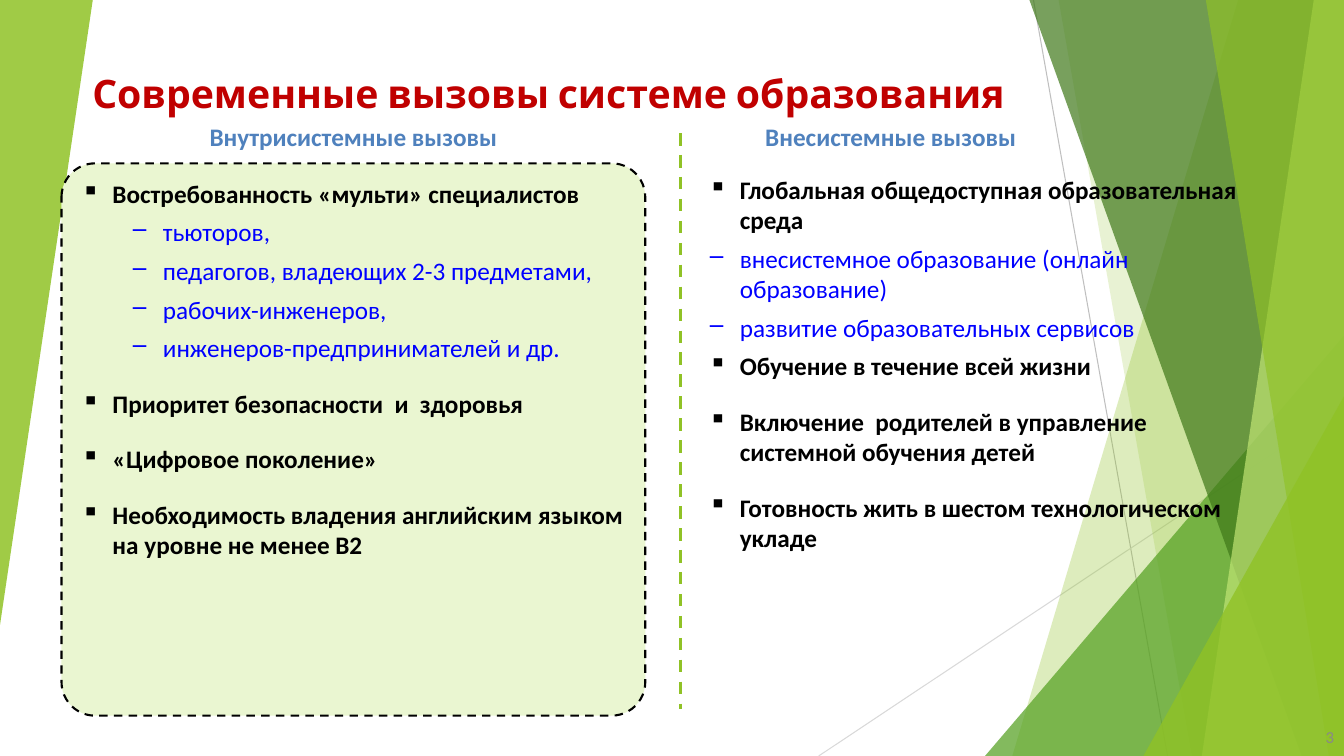
from lxml import etree
from pptx import Presentation, util as u
from pptx.dml.color import RGBColor
from pptx.enum import dml, shapes, text
from pptx.oxml.ns import qn

# Content
TITLE = "Современные вызовы системе образования"
HEADINGS = [("Внутрисистемные вызовы", 1.45, 4.11), ("Внесистемные вызовы", 7.27, 3.13)]
# Each item: kind, wording, space after in points
INTERNAL = [
    ("point", "Востребованность «мульти» специалистов", 6),
    ("detail", "тьюторов,", 6),
    ("detail", "педагогов, владеющих 2-3 предметами,", 6),
    ("detail", "рабочих-инженеров,", 6),
    ("detail", "инженеров-предпринимателей и др.", 18),
    ("point", "Приоритет безопасности  и  здоровья", 18),
    ("point", "«Цифровое поколение»", 18),
    ("point", "Необходимость владения английским языком на уровне не менее B2", 18),
]
EXTERNAL = [
    ("point", "Глобальная общедоступная образовательная среда", 6),
    ("detail", "внесистемное образование (онлайн образование)", 6),
    ("detail", "развитие образовательных сервисов", 6),
    ("point", "Обучение в течение всей жизни", 18),
    ("point", "Включение  родителей в управление системной обучения детей", 18),
    ("point", "Готовность жить в шестом технологическом укладе", 18),
]
STYLES = {
    "point": ("▪", {"color": "000000", "bold": True}),
    "detail": ("‒", {"color": "0000FF", "bold": False}),
}

# Background, back to front; every facet reaches the right and bottom edges
WIDTH, HEIGHT = 13.33, 7.5
HAIRLINES = [((10.25, 0), (11.58, HEIGHT), "BFBFBF"), ((WIDTH, 4.03), (8.12, HEIGHT), "D9D9D9")]
FACETS = [  # band: left edge at top and bottom; triangle: width and height
    ("band", 12.28, 10.04, "90C226", 30),
    ("band", 10.5, 11.82, "90C226", 20),
    ("triangle", 3.56, 4.17, "54A021", 72),
    ("band", 10.21, 12.91, "3F7819", 70),
    ("band", 13.03, 11.92, "C0E474", 70),
    ("band", 11.96, 13.18, "90C226", 65),
    ("triangle", 1.99, 3.57, "90C226", 80),
]

deck = Presentation()
deck.slide_width, deck.slide_height = u.Inches(WIDTH), u.Inches(HEIGHT)
page = deck.slides.add_slide(deck.slide_layouts[5])


def inches(*lengths):
    return [u.Inches(length) for length in lengths]


def rgb(color):
    return RGBColor.from_string(color)


def paint(shape, color, alpha=100):
    shape.shadow.inherit = False
    shape.fill.solid()
    shape.fill.fore_color.rgb = rgb(color)
    shape.line.fill.background()
    if alpha < 100:
        tint = shape.fill._xPr.find(".//" + qn("a:srgbClr"))
        etree.SubElement(tint, qn("a:alpha")).set("val", str(alpha * 1000))


def stroke(line, color, width, dash=None):
    line.color.rgb = rgb(color)
    line.width = u.Pt(width)
    if dash:
        line.dash_style = dash


def add_line(start, end, color, width, dash=None):
    line = page.shapes.add_connector(shapes.MSO_CONNECTOR.STRAIGHT, *inches(*start, *end))
    stroke(line.line, color, width, dash)
    etree.SubElement(line._element.spPr, qn("a:effectLst"))


def add_triangle(left, top, width, height, color, alpha):
    triangle = page.shapes.add_shape(
        shapes.MSO_SHAPE.ISOSCELES_TRIANGLE, *inches(left, top, width, height))
    triangle.adjustments[0] = 1
    paint(triangle, color, alpha)
    return triangle


def write(para, words, color, size=18, name="Calibri", bold=True):
    span = para.add_run()
    span.text = words
    for key, value in {"size": u.Pt(size), "name": name, "bold": bold}.items():
        setattr(span.font, key, value)
    span.font.color.rgb = rgb(color)


def add_label(words, place, align, wrap=True, **style):
    box = page.shapes.add_textbox(*inches(*place))
    box.text_frame.word_wrap = wrap
    para = box.text_frame.paragraphs[0]
    para.alignment = align
    write(para, words, **style)


def write_list(frame, items, detail_indent):
    frame.word_wrap = True
    frame.vertical_anchor = text.MSO_ANCHOR.TOP
    for index, (kind, words, gap) in enumerate(items):
        para = frame.add_paragraph() if index else frame.paragraphs[0]
        bullet, style = STYLES[kind]
        para.alignment = text.PP_ALIGN.LEFT
        para.level = int(kind == "detail")
        para.space_after = u.Pt(gap)
        margin = detail_indent if kind == "detail" else 0.31
        props = para._p.get_or_add_pPr()
        props.set("marL", str(u.Inches(margin)))
        props.set("indent", str(u.Inches(-0.31)))
        etree.SubElement(props, qn("a:buChar")).set("char", bullet)
        write(para, words, **style)


# Background facets
for start, end, color in HAIRLINES:
    add_line(start, end, color, 0.75)
for kind, first, second, color, alpha in FACETS:
    if kind == "triangle":
        add_triangle(WIDTH - first, HEIGHT - second, first, second, color, alpha)
    else:
        outline = page.shapes.build_freeform(*inches(first, 0), scale=1.0)
        corners = [(WIDTH, 0), (WIDTH, HEIGHT), (second, HEIGHT)]
        outline.add_line_segments([inches(*corner) for corner in corners], close=True)
        paint(outline.convert_to_shape(), color, alpha)
add_triangle(0, 0, 0.92, 6.2, "90C226", 85).rotation = 180

# Left column: dashed panel
panel = page.shapes.add_shape(
    shapes.MSO_SHAPE.ROUNDED_RECTANGLE, *inches(0.61, 1.62, 5.79, 5.48))
panel.adjustments[0] = 0.061
paint(panel, "EAF6D1")
stroke(panel.line, "000000", 1.5, dml.MSO_LINE.DASH)
write_list(panel.text_frame, INTERNAL, 0.81)

# Title
title = page.shapes.title
title.left, title.top, title.width, title.height = inches(0.74, 0.47, 9.4, 0.9)
frame = title.text_frame
frame.auto_size = text.MSO_AUTO_SIZE.NONE
frame.vertical_anchor = text.MSO_ANCHOR.MIDDLE
frame.paragraphs[0].alignment = text.PP_ALIGN.CENTER
write(frame.paragraphs[0], TITLE, "C00000", 28, "Cabin")
page.shapes._spTree.append(title._element)

# Column headings
for words, left, width in HEADINGS:
    add_label(words, (left, 1.15, width, 0.4), text.PP_ALIGN.CENTER, wrap=False, color="4F81BD")

# Right column and divider
external = page.shapes.add_textbox(*inches(6.93, 1.68, 5.74, 3.85))
write_list(external.text_frame, EXTERNAL, 0.31)
add_line((6.75, 1.32), (6.75, 7.03), "90C226", 2.25, dml.MSO_LINE.DASH)

# Page number
add_label("3", (12.73, 7.16, 0.6, 0.3), text.PP_ALIGN.RIGHT,
          color="898989", size=12, bold=False)

deck.save("out.pptx")
